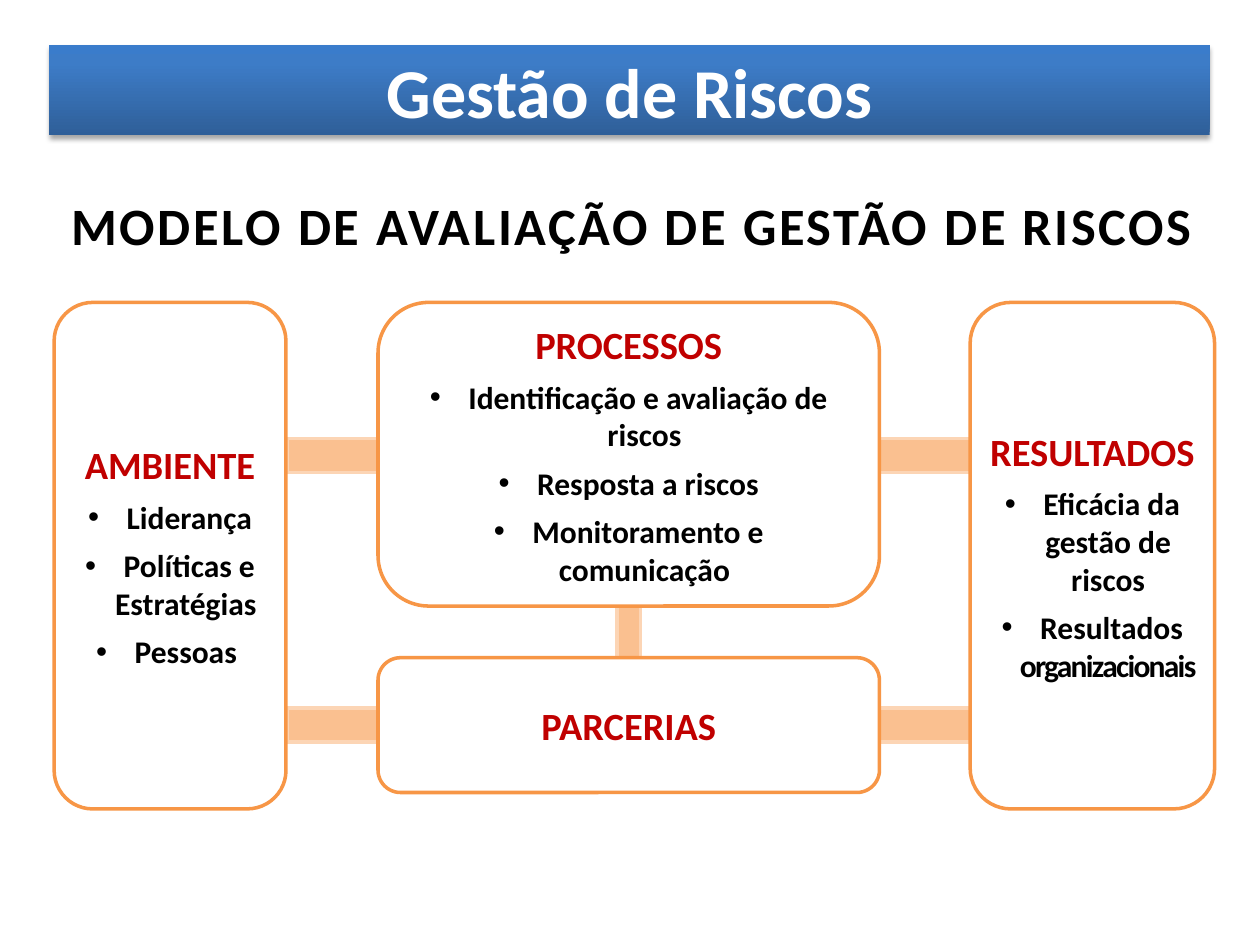
from lxml import etree
from pptx import Presentation
from pptx import util as u
from pptx.dml.color import RGBColor
from pptx.enum import shapes, text
from pptx.oxml import parse_xml
from pptx.oxml.ns import nsdecls, qn

# Grid: 100 columns by 75 rows, each cell a tenth of an inch
CELL = 0.1
ORANGE, PEACH, PALE = "F79646", "FAC090", "FCD5B5"
WHITE, BLACK, RED = "FFFFFF", "000000", "C00000"
HEADING = {"name": "Calibri", "size": u.Pt(22), "bold": True}
ITEM = {**HEADING, "size": u.Pt(18)}
INDENT = u.Inches(0.25)


def colour(value):
    return RGBColor.from_string(value)


def cells(*counts):
    return [u.Inches(count * CELL) for count in counts]


def add_span(para, words, font, tint, spacing=0):
    span = para.add_run()
    span.text = words
    for name, value in font.items():
        setattr(span.font, name, value)
    span.font.color.rgb = colour(tint)
    if spacing:
        span.font._element.set("spc", str(int(spacing * 100)))


def add_shape(page, kind, area, fill=None, line=None):
    shape = page.shapes.add_shape(kind, *cells(*area))
    shape.shadow.inherit = False
    if fill:
        shape.fill.solid()
        shape.fill.fore_color.rgb = colour(fill)
    if line:
        shape.line.color.rgb = colour(line)
        shape.line.width = u.Pt(2)
    else:
        shape.line.fill.background()
    return shape


def set_bullet(para):
    props = para._p.get_or_add_pPr()
    props.set("marL", str(INDENT))
    props.set("indent", str(-INDENT))
    etree.SubElement(props, qn("a:buFont")).set("typeface", "Arial")
    etree.SubElement(props, qn("a:buChar")).set("char", "•")


def add_banner(page, area, words):
    """Title bar with a vertical gradient and a soft shadow."""
    bar = add_shape(page, shapes.MSO_SHAPE.RECTANGLE, area)
    stops = "".join(
        f'<a:gs pos="{share * 1000}"><a:srgbClr val="{tint}"/></a:gs>'
        for share, tint in ((0, "2F5F99"), (80, "3D7CC7"), (100, "3A7CCB")))
    props = bar._element.spPr
    props.find(qn("a:prstGeom")).addnext(parse_xml(
        f'<a:gradFill {nsdecls("a")} rotWithShape="1"><a:gsLst>{stops}</a:gsLst>'
        '<a:lin ang="16200000" scaled="0"/></a:gradFill>'))
    props.find(qn("a:effectLst")).append(parse_xml(
        f'<a:outerShdw {nsdecls("a")} blurRad="{u.Pt(3.1)}" dist="{u.Pt(1.8)}" '
        'dir="5400000" rotWithShape="0"><a:srgbClr val="000000">'
        '<a:alpha val="35000"/></a:srgbClr></a:outerShdw>'))
    bar.text_frame.vertical_anchor = text.MSO_ANCHOR.MIDDLE
    para = bar.text_frame.paragraphs[0]
    para.alignment = text.PP_ALIGN.CENTER
    add_span(para, words, {**HEADING, "size": u.Pt(40)}, WHITE)


def add_heading(page, area, words):
    title = page.shapes.title
    for name, value in zip(("left", "top", "width", "height"), cells(*area)):
        setattr(title, name, value)
    frame = title.text_frame
    frame.auto_size = text.MSO_AUTO_SIZE.NONE
    frame.vertical_anchor = text.MSO_ANCHOR.MIDDLE
    para = frame.paragraphs[0]
    para.alignment = text.PP_ALIGN.CENTER
    add_span(para, words, {**HEADING, "size": u.Pt(30)}, BLACK, 1.5)


def add_panel(page, area, heading, items=(), inset=0.1):
    """Rounded box with a red heading and bullets made of (words, spacing)."""
    box = add_shape(page, shapes.MSO_SHAPE.ROUNDED_RECTANGLE, area, WHITE, ORANGE)
    frame = box.text_frame
    frame.word_wrap = True
    frame.vertical_anchor = text.MSO_ANCHOR.MIDDLE
    frame.margin_left = frame.margin_right = u.Inches(inset)
    add_span(frame.paragraphs[0], heading, HEADING, RED)
    for item in items:
        para = frame.add_paragraph()
        set_bullet(para)
        for words, spacing in item:
            add_span(para, words, ITEM, BLACK, spacing)
    for para in frame.paragraphs:
        para.alignment = text.PP_ALIGN.CENTER
        para.space_after = u.Pt(6)


def add_model(page, left, top):
    """Four panels, with the bars that link them behind."""
    middle, right = left + 25.7, left + 72.7
    centre = middle + 39.8 / 2
    bars = [(centre - 0.95, top + 21.5, 1.9, 9.4)]
    bars += [(left + 18.5, top + row, 54.3, 2.7) for row in (32.2, 10.8)]
    for area in bars:
        add_shape(page, shapes.MSO_SHAPE.RECTANGLE, area, PEACH, PALE)

    add_panel(page, (left, top, 18.4, 40.2), "AMBIENTE",
              [[(" Liderança", 0)], [(" Políticas e Estratégias", 0)],
               [(" Pessoas ", 0)]])
    # The wider inset wraps the last bullet before its final word
    add_panel(page, (middle, top, 39.8, 24.1), "PROCESSOS",
              [[(" Identificação e avaliação de riscos", 0)],
               [(" Resposta a riscos", 0)],
               [(" Monitoramento e comunicação", 0)]], inset=0.18)
    add_panel(page, (right, top, 19.4, 40.2), "RESULTADOS",
              [[(" Eficácia da gestão de riscos", 0)],
               [(" Resultados ", 0), ("organizacionais", -1)]], inset=0.04)
    add_panel(page, (middle, top + 28.2, 39.8, 10.7), "PARCERIAS")


def main():
    deck = Presentation()
    deck.slide_width, deck.slide_height = cells(100, 75)
    page = deck.slides.add_slide(deck.slide_layouts[5])
    add_heading(page, (3.9, 14.7, 92.6, 6.2),
                "MODELO DE AVALIAÇÃO DE GESTÃO DE RISCOS")
    add_model(page, 4.3, 24)
    add_banner(page, (3.9, 3.6, 92.1, 7.1), "Gestão de Riscos")
    deck.save("out.pptx")


if __name__ == "__main__":
    main()
